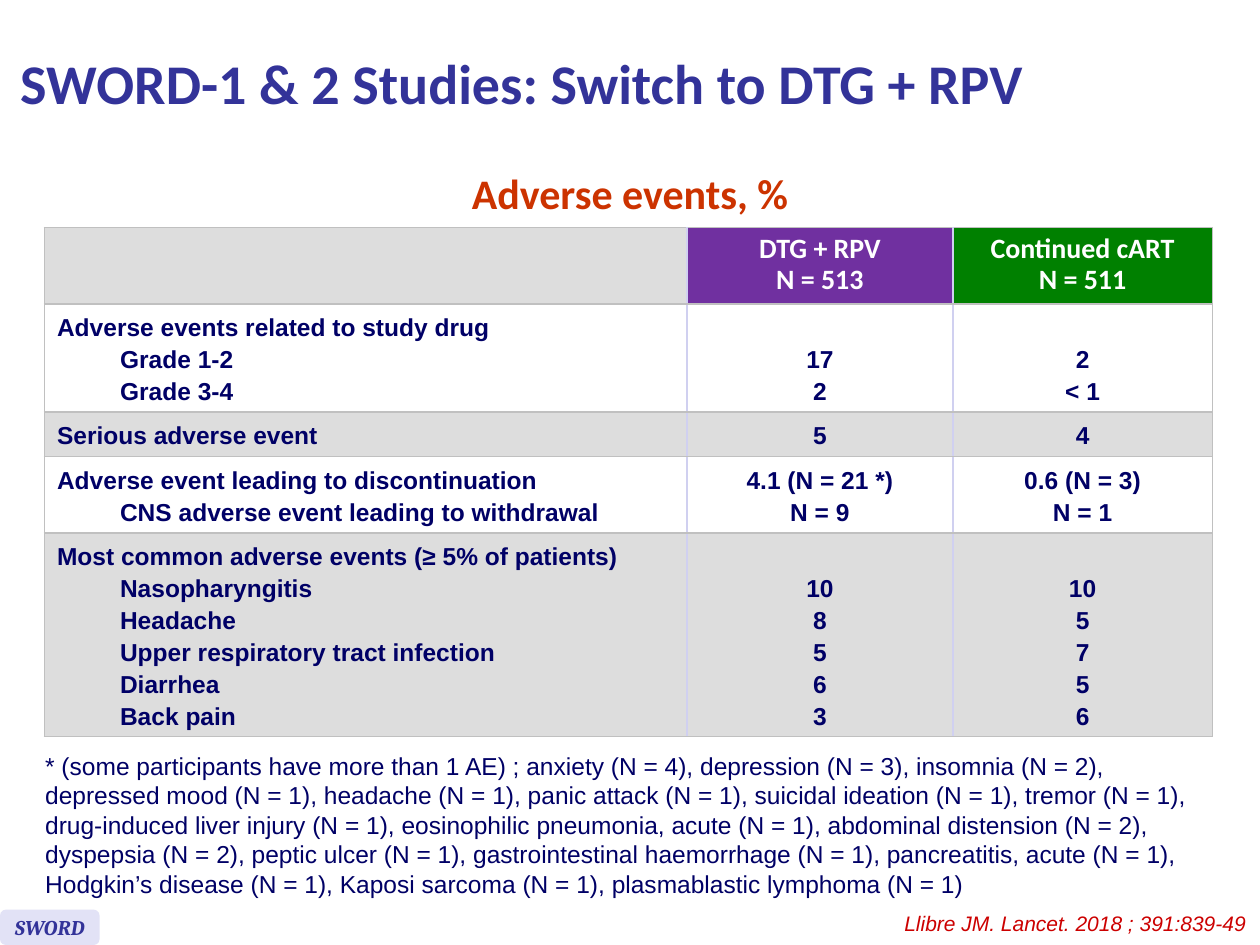
from lxml import etree
from pptx import Presentation
from pptx.dml.color import RGBColor
from pptx.enum import shapes, text
from pptx.oxml import ns
from pptx.util import Pt

NAVY = RGBColor(0x00, 0x00, 0x66)
INDIGO = RGBColor(0x33, 0x33, 0x99)
ORANGE = RGBColor(0xCC, 0x33, 0x00)
RED = RGBColor(0xCC, 0x00, 0x00)
PURPLE = RGBColor(0x70, 0x30, 0xA0)
GREEN = RGBColor(0x00, 0x80, 0x00)
WHITE = RGBColor(0xFF, 0xFF, 0xFF)
GREY = RGBColor(0xDD, 0xDD, 0xDD)
LAVENDER = RGBColor(0xE2, 0xE2, 0xF6)
RULE = RGBColor(0xC0, 0xC0, 0xC0)
COLUMN_RULE = RGBColor(0xD0, 0xD0, 0xF0)

LEFT, CENTER, RIGHT = text.PP_ALIGN.LEFT, text.PP_ALIGN.CENTER, text.PP_ALIGN.RIGHT
MIDDLE, BOTTOM = text.MSO_ANCHOR.MIDDLE, text.MSO_ANCHOR.BOTTOM
LINE_HEIGHT = 18.2
CELL_PADDING = 3.6
COLUMN_WIDTHS = (367.2, 151.9, 148.3)

HEADERS = [([], GREY), (["DTG + RPV", "N = 513"], PURPLE),
           (["Continued cART", "N = 511"], GREEN)]
ROWS = [
    (["Adverse events related to study drug", "Grade 1-2", "Grade 3-4"],
     ["17", "2"], ["2", "< 1"]),
    (["Serious adverse event"], ["5"], ["4"]),
    (["Adverse event leading to discontinuation",
      "CNS adverse event leading to withdrawal"],
     ["4.1 (N = 21 *)", "N = 9"], ["0.6 (N = 3)", "N = 1"]),
    (["Most common adverse events (≥ 5% of patients)", "Nasopharyngitis", "Headache",
      "Upper respiratory tract infection", "Diarrhea", "Back pain"],
     ["10", "8", "5", "6", "3"], ["10", "5", "7", "5", "6"]),
]
FOOTNOTE = (
    "* (some participants have more than 1 AE) ; anxiety (N = 4), depression (N = 3), "
    "insomnia (N = 2), depressed mood (N = 1), headache (N = 1), panic attack (N = 1), "
    "suicidal ideation (N = 1), tremor (N = 1), drug-induced liver injury (N = 1), "
    "eosinophilic pneumonia, acute (N = 1), abdominal distension (N = 2), "
    "dyspepsia (N = 2), peptic ulcer (N = 1), gastrointestinal haemorrhage (N = 1), "
    "pancreatitis, acute (N = 1), Hodgkin’s disease (N = 1), Kaposi sarcoma (N = 1), "
    "plasmablastic lymphoma (N = 1)")


def add_run(paragraph, words, name, size, color, bold=False, italic=False):
    run = paragraph.add_run()
    run.text = words
    font = run.font
    font.name, font.size, font.bold, font.italic = name, Pt(size), bold, italic
    font.color.rgb = color


def place(shape, box):
    shape.left, shape.top, shape.width, shape.height = (Pt(value) for value in box)


def add_text(slide, box, words, align, name, size, color, wrap=False, **style):
    shape = slide.shapes.add_textbox(*(Pt(value) for value in box))
    shape.text_frame.word_wrap = wrap
    paragraph = shape.text_frame.paragraphs[0]
    paragraph.alignment = align
    add_run(paragraph, words, name, size, color, **style)


def add_title(slide, box):
    title = slide.shapes.title
    place(title, box)
    title.text_frame.vertical_anchor = MIDDLE
    paragraph = title.text_frame.paragraphs[0]
    paragraph.alignment = LEFT
    add_run(paragraph, "SWORD-1 & 2 Studies: Switch to DTG + RPV",
            "Calibri", 32, INDIGO, bold=True)


def add_badge(slide, box):
    badge = slide.shapes.add_shape(shapes.MSO_SHAPE.ROUNDED_RECTANGLE,
                                   *(Pt(value) for value in box))
    badge.shadow.inherit = False
    badge.fill.solid()
    badge.fill.fore_color.rgb = LAVENDER
    badge.line.fill.background()
    badge.text_frame.word_wrap = False
    badge.text_frame.vertical_anchor = MIDDLE
    paragraph = badge.text_frame.paragraphs[0]
    paragraph.alignment = CENTER
    add_run(paragraph, "SWORD", "Cambria", 12, INDIGO, bold=True, italic=True)


def set_borders(cell, column):
    left = COLUMN_RULE if column > 0 else RULE
    right = COLUMN_RULE if column < len(COLUMN_WIDTHS) - 1 else RULE
    properties = cell._tc.get_or_add_tcPr()
    for tag, color in (("lnL", left), ("lnR", right), ("lnT", RULE), ("lnB", RULE)):
        line = etree.SubElement(properties, ns.qn(f"a:{tag}"), w=str(Pt(1)))
        fill = etree.SubElement(line, ns.qn("a:solidFill"))
        etree.SubElement(fill, ns.qn("a:srgbClr"), val=str(color))


def fill_cell(cell, column, lines, fill, anchor, name, size, color):
    set_borders(cell, column)
    cell.fill.solid()
    cell.fill.fore_color.rgb = fill
    cell.vertical_anchor = anchor
    cell.margin_top = cell.margin_bottom = Pt(CELL_PADDING)
    for index, words in enumerate(lines):
        frame = cell.text_frame
        paragraph = frame.add_paragraph() if index else frame.paragraphs[0]
        paragraph.line_spacing = Pt(LINE_HEIGHT)
        paragraph.alignment = CENTER if column else LEFT
        if index and not column:
            paragraph.level = 1
            paragraph._p.get_or_add_pPr().set("marL", str(Pt(36)))
        add_run(paragraph, words, name, size, color, bold=True)


def add_events_table(slide, left, top):
    line_counts = [2] + [len(row[0]) for row in ROWS]
    heights = [count * LINE_HEIGHT + 2 * CELL_PADDING for count in line_counts]
    table = slide.shapes.add_table(len(heights), len(COLUMN_WIDTHS), Pt(left), Pt(top),
                                   Pt(sum(COLUMN_WIDTHS)), Pt(sum(heights))).table
    table.first_row = table.horz_banding = False
    for column, width in zip(table.columns, COLUMN_WIDTHS):
        column.width = Pt(width)
    for row, height in zip(table.rows, heights):
        row.height = Pt(height)
    for column, (lines, fill) in enumerate(HEADERS):
        fill_cell(table.cell(0, column), column, lines, fill, MIDDLE, "Calibri", 16, WHITE)
    for row, cells in enumerate(ROWS, start=1):
        fill = WHITE if row % 2 else GREY
        for column, lines in enumerate(cells):
            fill_cell(table.cell(row, column), column, lines, fill, BOTTOM,
                      "Arial", 14, NAVY)


def main():
    presentation = Presentation()
    presentation.slide_width, presentation.slide_height = Pt(720), Pt(540)
    slide = presentation.slides.add_slide(presentation.slide_layouts[5])
    add_title(slide, (4.3, 3.6, 645, 87))
    add_text(slide, (261.4, 92.2, 197.2, 36), "Adverse events, %", CENTER,
             "Calibri", 24, ORANGE, bold=True)
    add_events_table(slide, 25.4, 130)
    add_text(slide, (18.7, 425.5, 682.6, 92.2), FOOTNOTE, LEFT, "Arial", 14, NAVY, wrap=True)
    add_badge(slide, (0, 519.8, 56.9, 20.2))
    add_text(slide, (508.3, 517, 211, 21.6), "Llibre JM. Lancet. 2018 ; 391:839-49", RIGHT,
             "Arial", 12, RED, italic=True)
    presentation.save("out.pptx")


if __name__ == "__main__":
    main()
